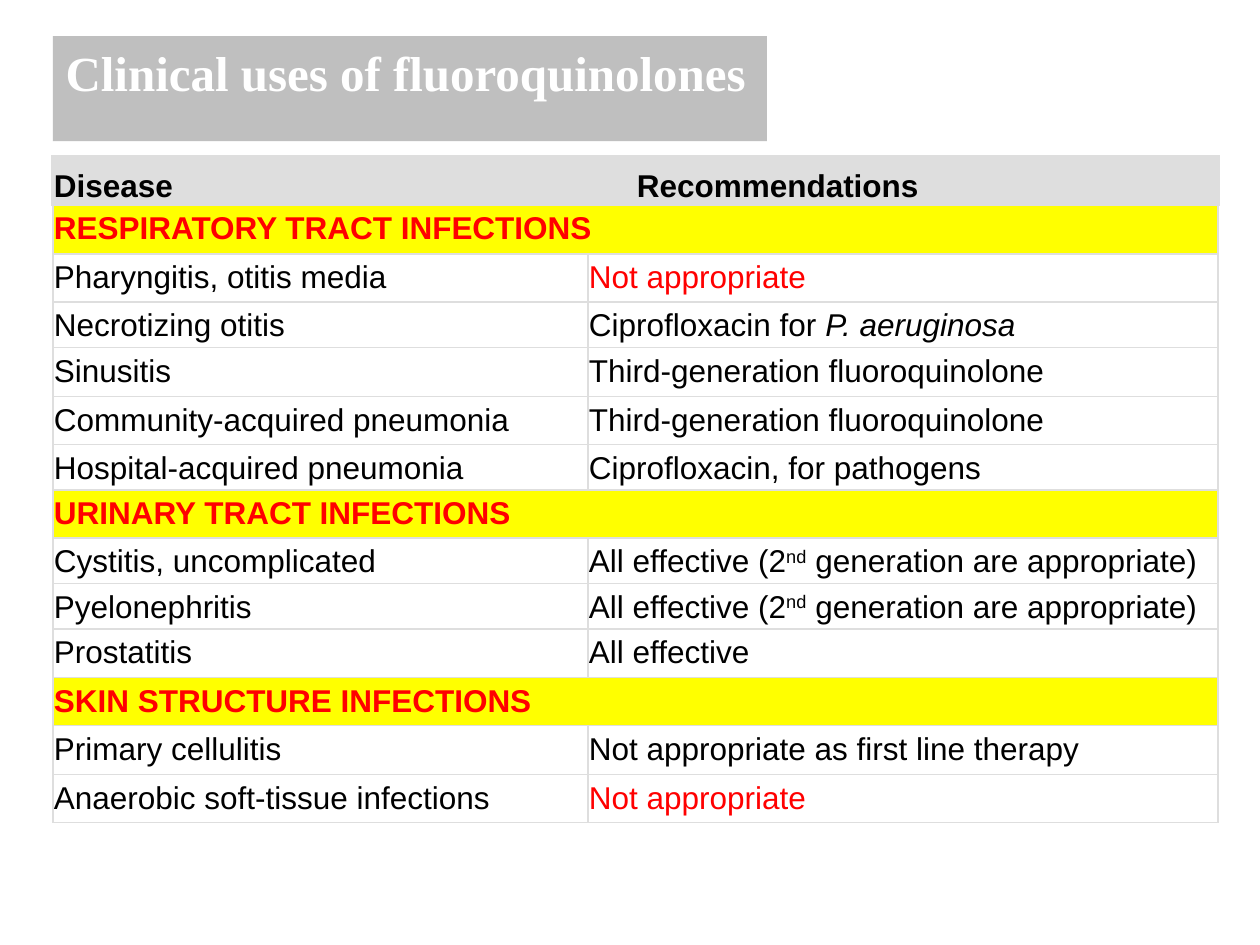
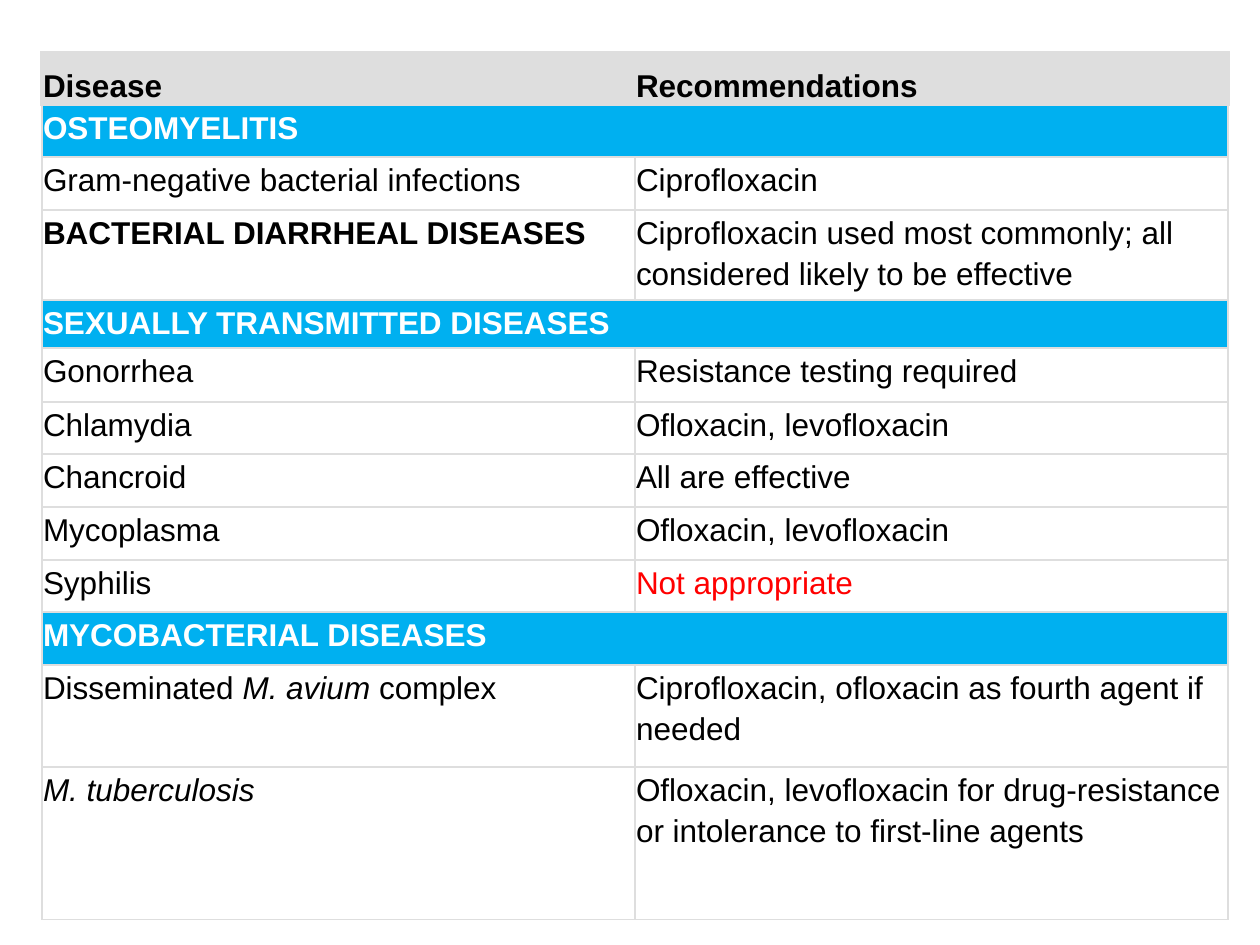
from lxml.etree import SubElement
from pptx import Presentation
from pptx.dml.color import RGBColor
from pptx.enum.text import MSO_ANCHOR as Anchor, MSO_AUTO_SIZE as AutoSize, PP_ALIGN as Align
from pptx.oxml.ns import qn
from pptx.util import Emu, Pt

PX_PER_INCH = 126
TITLE_ONLY, BLANK = 5, 6
RED, BLACK, WHITE = "FF0000", "000000", "FFFFFF"
YELLOW, BLUE, GREY, TITLE_GREY = "FFFF00", "00B0F0", "DEDEDE", "BFBFBF"
MARKS = {"*": "italic", "^": "superscript"}

HEADER = ("Disease", "Recommendations")
# One-item rows are section bands; *...* is italic and ^...^ is superscript.
FIRST_ROWS = [
    HEADER,
    ("RESPIRATORY TRACT INFECTIONS",),
    ("Pharyngitis, otitis media", "Not appropriate"),
    ("Necrotizing otitis", "Ciprofloxacin for *P. aeruginosa*"),
    ("Sinusitis", "Third-generation fluoroquinolone"),
    ("Community-acquired pneumonia", "Third-generation fluoroquinolone"),
    ("Hospital-acquired pneumonia", "Ciprofloxacin, for pathogens"),
    ("URINARY TRACT INFECTIONS",),
    ("Cystitis, uncomplicated", "All effective (2^nd^ generation are appropriate)"),
    ("Pyelonephritis", "All effective (2^nd^ generation are appropriate)"),
    ("Prostatitis", "All effective"),
    ("SKIN STRUCTURE INFECTIONS",),
    ("Primary cellulitis", "Not appropriate as first line therapy"),
    ("Anaerobic soft-tissue infections", "Not appropriate"),
]
FIRST_HEIGHTS = [48, 49, 48, 43, 49, 48, 43, 48, 43, 43, 49, 48, 49, 48]
SECOND_ROWS = [
    HEADER,
    ("OSTEOMYELITIS",),
    ("Gram-negative bacterial infections", "Ciprofloxacin"),
    ("BACTERIAL DIARRHEAL DISEASES",
     "Ciprofloxacin used most commonly; all considered likely to be effective"),
    ("SEXUALLY TRANSMITTED DISEASES",),
    ("Gonorrhea", "Resistance testing required"),
    ("Chlamydia", "Ofloxacin, levofloxacin"),
    ("Chancroid", "All are effective"),
    ("Mycoplasma", "Ofloxacin, levofloxacin"),
    ("Syphilis", "Not appropriate"),
    ("MYCOBACTERIAL DISEASES",),
    ("Disseminated *M. avium* complex",
     "Ciprofloxacin, ofloxacin as fourth agent if needed"),
    ("*M. tuberculosis*",
     "Ofloxacin, levofloxacin for drug-resistance or intolerance to first-line agents"),
]
SECOND_HEIGHTS = [52, 52, 53, 90, 48, 54, 52, 53, 53, 52, 53, 102, 153]


def px(length):
    return Emu(round(length * 914400 / PX_PER_INCH))


def rgb(value):
    return RGBColor.from_string(value)


def set_all(target, values):
    for name, value in values.items():
        setattr(target, name, value)


def paint(target, color):
    target.fill.solid()
    target.fill.fore_color.rgb = rgb(color)


def split_marks(text):
    """Yield (piece, style) pairs, where style is None, italic or superscript."""
    piece, style = "", None
    for char in text:
        if char in MARKS:
            if piece:
                yield piece, style
            piece, style = "", None if style else MARKS[char]
        else:
            piece += char
    if piece:
        yield piece, style


class Deck:
    """Holds the presentation, its text styles and the current page."""

    cell_font = {"name": "Arial", "size": Pt(18)}
    title_font = {"name": "Times New Roman", "size": Pt(28), "bold": True}
    cell_format = {f"margin_{side}": px(1) for side in ("left", "right", "top", "bottom")}
    title_frame = {"word_wrap": True, "auto_size": AutoSize.SHAPE_TO_FIT_TEXT,
                   "vertical_anchor": Anchor.TOP}

    def __init__(self):
        self.file = Presentation()
        set_all(self.file, {"slide_width": px(1260), "slide_height": px(945)})

    def add_page(self, layout):
        self.page = self.file.slides.add_slide(self.file.slide_layouts[layout])

    def title(self, text, left, top, width, height):
        box = self.page.shapes.title
        set_all(box, {"left": px(left), "top": px(top),
                      "width": px(width), "height": px(height)})
        paint(box, TITLE_GREY)
        set_all(box.text_frame, self.title_frame)
        para = box.text_frame.paragraphs[0]
        para.alignment = Align.LEFT
        self.span(para, text, WHITE, self.title_font)

    def span(self, para, text, color, font, style=None):
        span = para.add_run()
        span.text = text
        set_all(span.font, font)
        span.font.color.rgb = rgb(color)
        if style == "italic":
            span.font.italic = True
        elif style == "superscript":
            span._r.get_or_add_rPr().set("baseline", "30000")

    def borders(self, cell, is_header):
        properties = cell._tc.get_or_add_tcPr()
        for side in "LRTB":
            width = Pt(2.25) if is_header and side != "B" else Pt(1)
            line = SubElement(properties, qn(f"a:ln{side}"), w=str(width))
            SubElement(SubElement(line, qn("a:solidFill")), qn("a:srgbClr"), val=GREY)

    def cell_text(self, cell, text, color, bold):
        para = cell.text_frame.paragraphs[0]
        para.line_spacing = 1.15
        for piece, style in split_marks(text):
            self.span(para, piece, color, {**self.cell_font, "bold": bold}, style)

    def table(self, left, top, widths, heights, rows, band_fill, band_color):
        last = len(widths) - 1
        table = self.page.shapes.add_table(
            len(rows), len(widths), px(left), px(top), px(sum(widths)), px(sum(heights))).table
        set_all(table, {"first_row": False, "horz_banding": False})
        for column, width in zip(table.columns, widths):
            column.width = px(width)
        for index, (texts, height) in enumerate(zip(rows, heights)):
            table.rows[index].height = px(height)
            is_header, is_band = index == 0, len(texts) == 1
            fill = GREY if is_header else band_fill if is_band else WHITE
            for column in range(last + 1):
                cell = table.cell(index, column)
                set_all(cell, self.cell_format)
                cell.vertical_anchor = Anchor.BOTTOM if is_header else Anchor.TOP
                self.borders(cell, is_header)
                paint(cell, fill)
            starts = [0] if is_band else [0, last if is_header else 1]
            ends = [start - 1 for start in starts[1:]] + [last]
            for text, start, end in zip(texts, starts, ends):
                cell = table.cell(index, start)
                if end > start:
                    cell.merge(table.cell(index, end))
                color = band_color if is_band else RED if text == "Not appropriate" else BLACK
                self.cell_text(cell, text, color, is_header or text.isupper())


def main():
    deck = Deck()
    deck.add_page(TITLE_ONLY)
    deck.title("Clinical uses of fluoroquinolones", 53, 36, 714, 72)
    deck.table(53, 157, [535, 48, 582], FIRST_HEIGHTS, FIRST_ROWS, YELLOW, RED)
    deck.add_page(BLANK)
    deck.table(42, 53, [593, 593], SECOND_HEIGHTS, SECOND_ROWS, BLUE, WHITE)
    deck.file.save("out.pptx")


if __name__ == "__main__":
    main()
